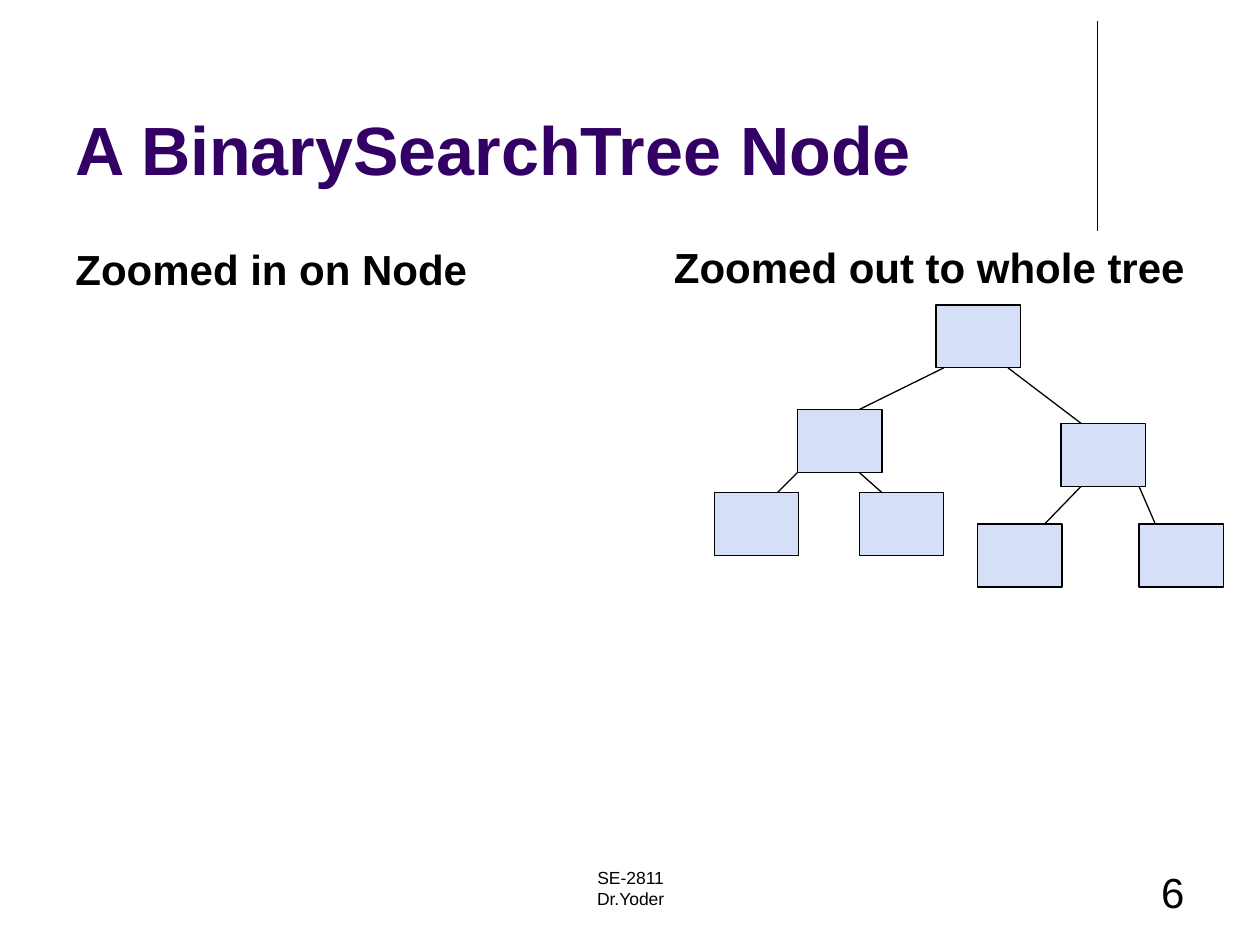
from dataclasses import dataclass

from lxml import etree
from pptx import Presentation
from pptx.dml.color import RGBColor
from pptx.enum.shapes import MSO_CONNECTOR, MSO_SHAPE
from pptx.enum.text import MSO_ANCHOR, PP_ALIGN
from pptx.oxml.ns import qn
from pptx.util import Inches, Pt

STRAIGHT = MSO_CONNECTOR.STRAIGHT
RECTANGLE = MSO_SHAPE.RECTANGLE
TOP, BOTTOM = MSO_ANCHOR.TOP, MSO_ANCHOR.BOTTOM
LEFT, CENTER, RIGHT = PP_ALIGN.LEFT, PP_ALIGN.CENTER, PP_ALIGN.RIGHT


@dataclass(frozen=True)
class Theme:
    font: str = "Arial"
    title: RGBColor = RGBColor(0x33, 0x00, 0x66)
    ink: RGBColor = RGBColor(0x00, 0x00, 0x00)
    node: RGBColor = RGBColor(0xD5, 0xDF, 0xF7)
    title_size: int = 39
    heading_size: int = 24
    footer_size: int = 10
    number_size: int = 24
    line_width: float = 0.75


THEME = Theme()

NODE_SIZE = (0.67, 0.5)
NODES = {
    "root": (1.76, 0),
    "left": (0.66, 0.83),
    "right": (2.75, 0.94),
    "left_left": (0, 1.49),
    "left_right": (1.15, 1.49),
    "right_left": (2.09, 1.74),
    "right_right": (3.37, 1.74),
}
EDGES = [
    ("root", 1.82, "left", 1.15),
    ("root", 2.33, "right", 2.91),
    ("left", 0.66, "left_left", 0.5),
    ("left", 1.15, "left_right", 1.33),
    ("right", 2.91, "right_left", 2.62),
    ("right", 3.37, "right_right", 3.5),
]


def add_text(slide, text, box, size, color=THEME.ink, bold=False, align=LEFT, anchor=TOP):
    tf = slide.shapes.add_textbox(*map(Inches, box)).text_frame
    tf.word_wrap = True
    tf.vertical_anchor = anchor
    for i, line in enumerate(text.split("\n")):
        p = tf.add_paragraph() if i else tf.paragraphs[0]
        p.alignment = align
        r = p.add_run()
        r.text = line
        r.font.name = THEME.font
        r.font.size = Pt(size)
        r.font.bold = bold
        r.font.color.rgb = color


def add_line(slide, x1, y1, x2, y2):
    line = slide.shapes.add_connector(STRAIGHT, *map(Inches, (x1, y1, x2, y2)))
    line.line.color.rgb = THEME.ink
    line.line.width = Pt(THEME.line_width)
    etree.SubElement(line._element.spPr, qn("a:effectLst"))


def add_node(slide, x, y):
    sp = slide.shapes.add_shape(RECTANGLE, *map(Inches, (x, y, *NODE_SIZE)))
    sp.shadow.inherit = False
    sp.fill.solid()
    sp.fill.fore_color.rgb = THEME.node
    sp.line.color.rgb = THEME.ink
    sp.line.width = Pt(THEME.line_width)


def add_header(slide, x, y, w, h):
    add_line(slide, x + 8.21, y - 0.13, x + 8.21, y + 1.53)
    add_text(slide, "A BinarySearchTree Node", (x, y, w, h), THEME.title_size,
             color=THEME.title, bold=True, anchor=BOTTOM)


def add_heading(slide, text, box):
    add_text(slide, text, box, THEME.heading_size, bold=True, anchor=BOTTOM)


def add_tree(slide, x, y):
    for dx, dy in NODES.values():
        add_node(slide, x + dx, y + dy)
    for parent, start, child, end in EDGES:
        parent_bottom = NODES[parent][1] + NODE_SIZE[1]
        child_top = NODES[child][1]
        add_line(slide, x + start, y + parent_bottom, x + end, y + child_top)


def add_footer(slide, x, y, w, h):
    add_text(slide, "SE-2811\nDr.Yoder", (x + 2.92, y, 3.17, h), THEME.footer_size, align=CENTER)
    add_text(slide, "6", (x + w - 2.33, y, 2.33, h), THEME.number_size, align=RIGHT)


def main():
    prs = Presentation()
    prs.slide_width, prs.slide_height = Inches(10), Inches(7.5)
    s = prs.slides.add_slide(prs.slide_layouts[6])
    add_header(s, 0.5, 0.3, 9, 1.25)
    add_heading(s, "Zoomed in on Node", (0.5, 1.68, 4.42, 0.7))
    add_heading(s, "Zoomed out to whole tree", (5.25, 1.67, 4.42, 0.7))
    add_tree(s, 5.67, 2.42)
    add_footer(s, 0.5, 6.83, 9, 0.5)
    prs.save("out.pptx")


if __name__ == "__main__":
    main()
